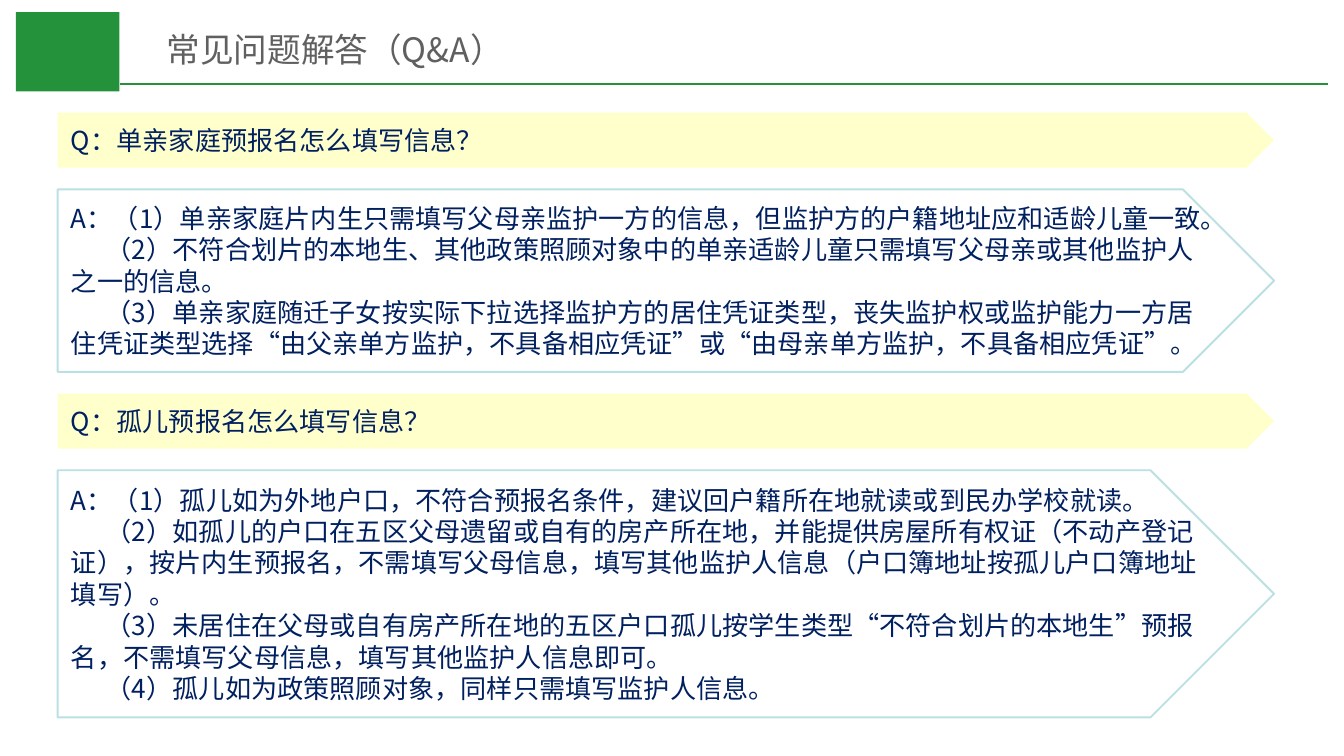
from lxml.etree import SubElement
from pptx import Presentation
from pptx.dml.color import RGBColor
from pptx.enum.shapes import MSO_CONNECTOR as Connector, MSO_SHAPE as Shape
from pptx.enum.text import MSO_ANCHOR as Anchor, PP_ALIGN as Align
from pptx.oxml.ns import qn
from pptx.util import Cm, Pt

TITLE = "常见问题解答（Q&A）"
QUESTIONS = [
    {
        "question": "Q：单亲家庭预报名怎么填写信息？",
        "answer": [
            "A：（1）单亲家庭片内生只需填写父母亲监护一方的信息，但监护方的户籍地址应和适龄儿童一致。",
            "（2）不符合划片的本地生、其他政策照顾对象中的单亲适龄儿童只需填写父母亲或其他监护人之一的信息。",
            "（3）单亲家庭随迁子女按实际下拉选择监护方的居住凭证类型，丧失监护权或监护能力一方居住凭证类型选择“由父亲单方监护，不具备相应凭证”或“由母亲单方监护，不具备相应凭证”。",
        ],
        "answer_height": 3.45,
    },
    {
        "question": "Q：孤儿预报名怎么填写信息？",
        "answer": [
            "A：（1）孤儿如为外地户口，不符合预报名条件，建议回户籍所在地就读或到民办学校就读。",
            "（2）如孤儿的户口在五区父母遗留或自有的房产所在地，并能提供房屋所有权证（不动产登记证），按片内生预报名，不需填写父母信息，填写其他监护人信息（户口簿地址按孤儿户口簿地址填写）。",
            "（3）未居住在父母或自有房产所在地的五区户口孤儿按学生类型“不符合划片的本地生”预报名，不需填写父母信息，填写其他监护人信息即可。",
            "（4）孤儿如为政策照顾对象，同样只需填写监护人信息。",
        ],
        "answer_height": 4.67,
    },
]

THEME = {
    "font": "Noto Sans CJK SC",
    "green": RGBColor.from_string("24923B"),
    "yellow": RGBColor.from_string("FFFFCC"),
    "outline": RGBColor.from_string("BBE0E3"),
    "title": {"size": Pt(18), "color": RGBColor.from_string("606060")},
    "body": {"size": Pt(14), "color": RGBColor.from_string("002060")},
    "line_width": Pt(1),
}
LEFT, TOP, WIDTH = 1.09, 2.13, 22.99
QUESTION_HEIGHT, GAP = 1.04, 0.41
ITEM_INDENT = 0.66


def apply_format(target, values):
    for name, value in values.items():
        setattr(target, name, value)


def write_text(box, lines, style, anchor):
    frame = box.text_frame
    apply_format(frame, {"word_wrap": True, "vertical_anchor": anchor})
    for index, line in enumerate(lines):
        para = frame.paragraphs[0] if index == 0 else frame.add_paragraph()
        para.alignment = Align.LEFT
        if index:
            para._p.get_or_add_pPr().set("indent", str(Cm(ITEM_INDENT)))
        span = para.add_run()
        span.text = line
        apply_format(span.font, {"size": style["size"], "name": THEME["font"]})
        span.font.color.rgb = style["color"]
        east_asian = SubElement(span._r.get_or_add_rPr(), qn("a:ea"))
        east_asian.set("typeface", THEME["font"])


def add_block(page, kind, place, fill=None, outline=None):
    box = page.shapes.add_shape(kind, *map(Cm, place))
    box.shadow.inherit = False
    for part, color in ((box.fill, fill), (box.line.fill, outline)):
        if color is None:
            part.background()
        else:
            part.solid()
            part.fore_color.rgb = color
    if outline is not None:
        box.line.width = THEME["line_width"]
    return box


def add_header(page):
    add_block(page, Shape.RECTANGLE, (0.3, 0.23, 1.96, 1.5), fill=THEME["green"])
    rule = page.shapes.add_connector(
        Connector.STRAIGHT, *map(Cm, (2.26, 1.58, 25.1, 1.58)))
    rule.line.color.rgb = THEME["green"]
    rule.line.width = THEME["line_width"]
    SubElement(rule._element.spPr, qn("a:effectLst"))
    title = page.shapes.add_textbox(*map(Cm, (2.9, 0.36, 21.59, 1.07)))
    write_text(title, [TITLE], THEME["title"], Anchor.BOTTOM)


def add_questions(page):
    top = TOP
    for entry in QUESTIONS:
        blocks = (
            ([entry["question"]], QUESTION_HEIGHT, {"fill": THEME["yellow"]}),
            (entry["answer"], entry["answer_height"], {"outline": THEME["outline"]}),
        )
        for lines, height, colors in blocks:
            box = add_block(page, Shape.PENTAGON, (LEFT, top, WIDTH, height), **colors)
            write_text(box, lines, THEME["body"], Anchor.MIDDLE)
            top += height + GAP


def main():
    deck = Presentation()
    apply_format(deck, {"slide_width": Cm(25.4), "slide_height": Cm(14.29)})
    page = deck.slides.add_slide(deck.slide_layouts[6])
    add_header(page)
    add_questions(page)
    deck.save("out.pptx")


if __name__ == "__main__":
    main()
